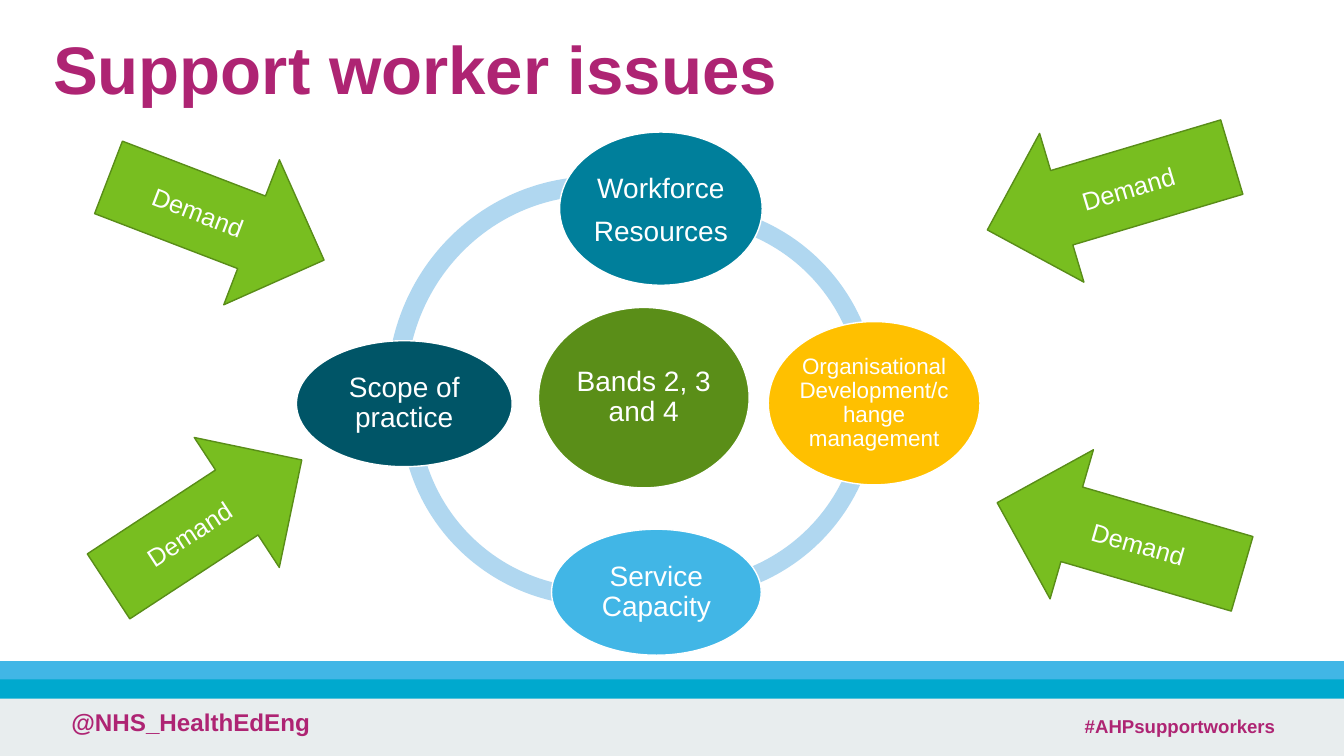
from pptx import Presentation
from pptx.dml.color import RGBColor
from pptx.enum.shapes import MSO_SHAPE
from pptx.enum.text import MSO_ANCHOR, PP_ALIGN
from pptx.util import Inches, Pt

RECT, OVAL, ARC = MSO_SHAPE.RECTANGLE, MSO_SHAPE.OVAL, MSO_SHAPE.BLOCK_ARC
RIGHT, LEFT = MSO_SHAPE.RIGHT_ARROW, MSO_SHAPE.LEFT_ARROW
TOP, MIDDLE = MSO_ANCHOR.TOP, MSO_ANCHOR.MIDDLE
WHITE, MAGENTA, SKY = "FFFFFF", "AE2473", "41B6E6"

prs = Presentation()
prs.slide_width, prs.slide_height = Inches(13.33), Inches(7.5)
slide = prs.slides.add_slide(prs.slide_layouts[6])


def draw(kind, box, fill, line=None):
    shape = slide.shapes.add_shape(kind, *map(Inches, box))
    shape.shadow.inherit = False
    shape.fill.solid()
    shape.fill.fore_color.rgb = RGBColor.from_string(fill)
    if line:
        shape.line.color.rgb = RGBColor.from_string(line)
        shape.line.width = Pt(1)
    else:
        shape.line.fill.background()
    return shape


def write(shape, text, size, color=WHITE, bold=False, align=PP_ALIGN.CENTER,
          anchor=MIDDLE, inset=None, spacing=1, after=0):
    """Fill the shape with text, one paragraph per line of the string."""
    frame = shape.text_frame
    frame.word_wrap = True
    frame.vertical_anchor = anchor
    if inset is not None:
        for side in ("left", "top", "right", "bottom"):
            setattr(frame, f"margin_{side}", Inches(inset))
    frame.text = text
    for paragraph in frame.paragraphs:
        paragraph.alignment = align
        paragraph.line_spacing = spacing
        paragraph.space_after = Pt(after)
        font = {"name": "Arial", "size": Pt(size), "bold": bold}
        for key, value in font.items():
            setattr(paragraph.font, key, value)
        paragraph.font.color.rgb = RGBColor.from_string(color)


# Footer bands
for top, height, fill in [(6.93, 0.57, "E8EDEE"), (6.56, 0.19, SKY),
                          (6.74, 0.19, "00A9CE")]:
    draw(RECT, (0, top, 13.33, height), fill)

# Title and footer wording
for text, box, size, anchor, spacing in [
    ("@NHS_HealthEdEng", (0.61, 6.97, 7.78, 0.53), 17.3, TOP, 1),
    ("Support worker issues", (0.43, 0, 11.5, 1.45), 48, MIDDLE, 0.9),
    ("#AHPsupportworkers", (10.66, 7.04, 2.55, 0.33), 13.3, TOP, 1),
]:
    write(slide.shapes.add_textbox(*map(Inches, box)), text, size, MAGENTA,
          bold=True, align=PP_ALIGN.LEFT, anchor=anchor, spacing=spacing)

# Ring: clockwise angles in degrees, each end hidden under a topic oval;
# one adjustment unit is 100000/60000 degrees
for box, start, end in [
    ((3.84, 1.75, 4.14, 4.23), 180, 270),
    ((3.97, 2.12, 3.89, 3.89), 90, 172),
    ((4.82, 2.05, 3.89, 3.89), 10, 80),
    ((4.82, 2.02, 3.89, 3.89), 280, 350),
]:
    arc = draw(ARC, box, "B0D7F0")
    for i, value in enumerate((start * 0.6, end * 0.6, 0.046)):
        arc.adjustments[i] = value

# Hub and the four topics around it
for text, box, fill, size, spacing, inset in [
    ("Bands 2, 3 and 4", (5.34, 3.05, 2.09, 1.79), "5A8E18", 20, 0.9, 0.03),
    ("Workforce\nResources", (5.55, 1.31, 2.01, 1.52), "007F9B", 20, 1, 0.03),
    ("Organisational Development/change management",
     (7.62, 3.19, 2.1, 1.62), "FFC000", 16, 0.9, 0),
    ("Service Capacity", (5.47, 5.25, 2.08, 1.25), SKY, 20, 0.9, 0.03),
    ("Scope of practice", (2.94, 3.38, 2.14, 1.25), "005567", 20, 0.9, 0.03),
]:
    write(draw(OVAL, box, fill, WHITE), text, size, inset=inset,
          spacing=spacing, after=size * 0.35)

# Demand pressing in from the corners
for kind, left, top, width, angle in [
    (RIGHT, 0.89, 4.42, 2.29, 326.8),
    (LEFT, 9.84, 4.57, 2.53, 16.2),
    (LEFT, 9.74, 1.15, 2.53, 343.4),
    (RIGHT, 1, 1.4, 2.29, 21),
]:
    demand = draw(kind, (left, top, width, 1.54), "78BE20", "598D18")
    demand.rotation = angle
    write(demand, "Demand", 18)

prs.save("out.pptx")
